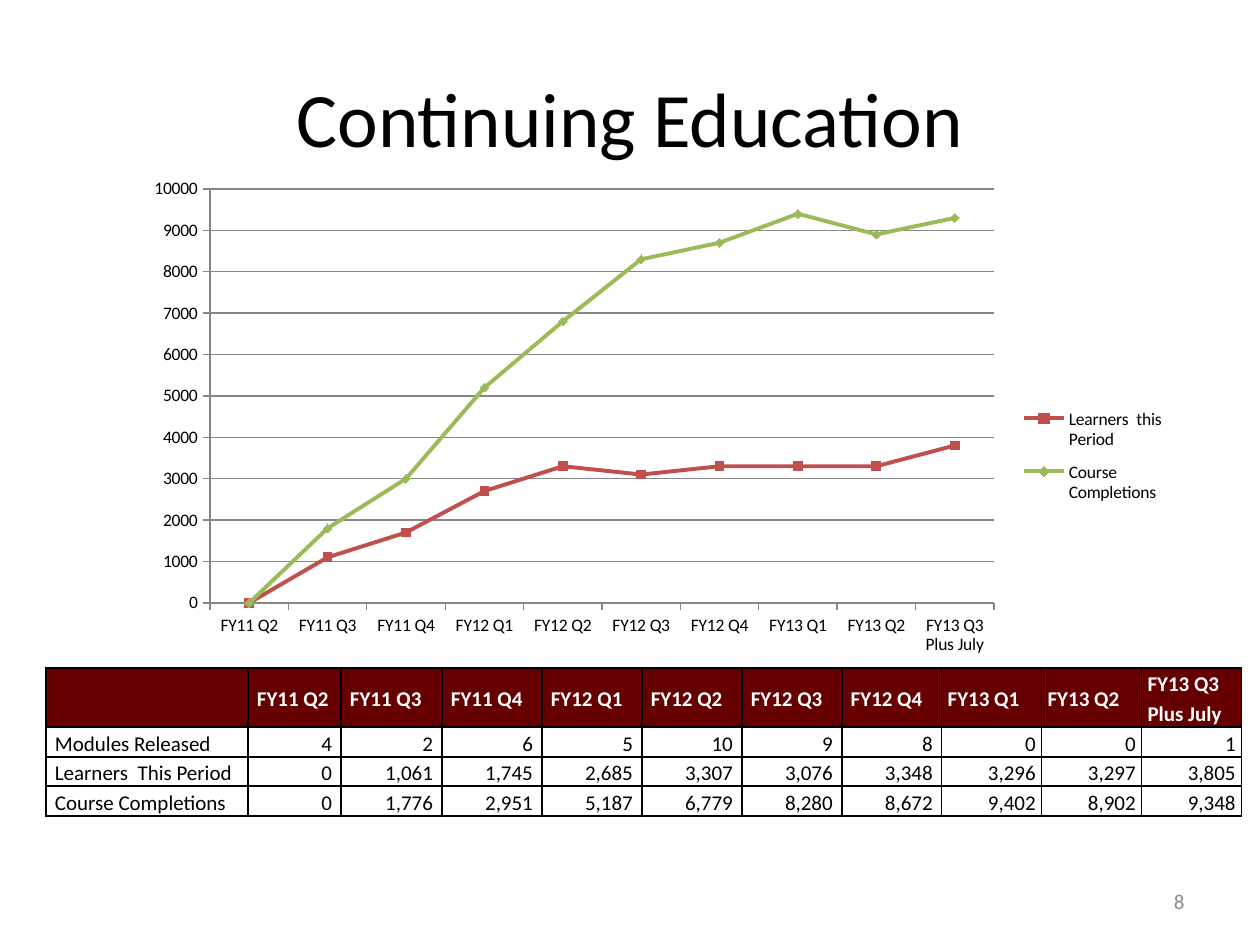
import pptx
import pptx.chart.data
import pptx.dml.color
import pptx.enum.chart
import pptx.enum.text
import pptx.oxml
import pptx.oxml.ns
import pptx.util

ALIGN = pptx.enum.text.PP_ALIGN
ANCHOR = pptx.enum.text.MSO_ANCHOR
MARKER = pptx.enum.chart.XL_MARKER_STYLE
NS = pptx.oxml.ns.nsdecls

FONT = "Calibri"
BLACK, WHITE, GREY = "000000", "FFFFFF", "8C8C8C"
MAROON, RED, GREEN, AXIS = "660000", "C0504D", "9BBB59", "868686"

QUARTERS = ["FY11 Q2", "FY11 Q3", "FY11 Q4", "FY12 Q1", "FY12 Q2", "FY12 Q3",
            "FY12 Q4", "FY13 Q1", "FY13 Q2", "FY13 Q3 Plus July"]
MODULES = [4, 2, 6, 5, 10, 9, 8, 0, 0, 1]
LEARNERS = [0, 1061, 1745, 2685, 3307, 3076, 3348, 3296, 3297, 3805]
COMPLETIONS = [0, 1776, 2951, 5187, 6779, 8280, 8672, 9402, 8902, 9348]


def px(n):
    return pptx.util.Emu(round(n * 914400 / 126))


def rgb(value):
    return pptx.dml.color.RGBColor.from_string(value)


class Deck:
    def __init__(self):
        self.prs = pptx.Presentation()
        self.prs.slide_width, self.prs.slide_height = px(1260), px(945)
        self.s = self.prs.slides.add_slide(self.prs.slide_layouts[5])

    def run(self, p, text, size, color, bold=False):
        r = p.add_run()
        r.text = text
        r.font.name, r.font.size, r.font.bold = FONT, pptx.util.Pt(size), bold
        r.font.color.rgb = rgb(color)

    def title(self, text, x, y, w, h):
        sp = self.s.shapes.title
        sp.left, sp.top, sp.width, sp.height = map(px, (x, y, w, h))
        tf = sp.text_frame
        tf.vertical_anchor = ANCHOR.MIDDLE
        tf.paragraphs[0].alignment = ALIGN.CENTER
        self.run(tf.paragraphs[0], text, 44, BLACK)

    def page_number(self, text, x, y, w, h):
        tf = self.s.shapes.add_textbox(*map(px, (x, y, w, h))).text_frame
        tf.word_wrap = True
        tf.vertical_anchor = ANCHOR.MIDDLE
        tf.paragraphs[0].alignment = ALIGN.RIGHT
        self.run(tf.paragraphs[0], text, 12, GREY)

    def chart_layout(self, box, frame, target=""):
        """Layout element for a box inside the chart frame, both in slide px."""
        x, y, w, h = frame
        parts = ((box[0] - x) / w, (box[1] - y) / h, box[2] / w, box[3] / h)
        places = "".join(f'<c:{tag} val="{v:.4f}"/>' for tag, v in zip("xywh", parts))
        return pptx.oxml.parse_xml(
            f'<c:layout {NS("c")}><c:manualLayout>{target}<c:xMode val="edge"/>'
            f'<c:yMode val="edge"/>{places}</c:manualLayout></c:layout>')

    def line_chart(self, cats, series, frame, plot, legend):
        data = pptx.chart.data.CategoryChartData(number_format="0")
        data.categories = cats
        for name, values, _, _ in series:
            data.add_series(name, values)
        kind = pptx.enum.chart.XL_CHART_TYPE.LINE_MARKERS
        chart = self.s.shapes.add_chart(kind, *map(px, frame), data).chart
        chart.font.name, chart.font.size = FONT, pptx.util.Pt(10)
        chart.font.color.rgb = rgb(BLACK)
        chart.has_title = False
        chart.has_legend = True
        chart.legend.position = pptx.enum.chart.XL_LEGEND_POSITION.RIGHT
        chart.legend.include_in_layout = False
        chart.plots[0].vary_by_categories = False

        # Axes and gridlines
        values = chart.value_axis
        values.minimum_scale, values.maximum_scale = 0, 10000
        values.major_unit = 1000
        values.has_major_gridlines = True
        values.tick_labels.number_format = "0"
        values.tick_labels.number_format_is_linked = False
        for axis in (chart.category_axis, values):
            axis.major_tick_mark = pptx.enum.chart.XL_TICK_MARK.OUTSIDE
        for part in (chart.category_axis, values, values.major_gridlines):
            part.format.line.color.rgb = rgb(AXIS)
            part.format.line.width = pptx.util.Pt(0.75)

        # Series lines and markers
        for line, (_, _, color, marker) in zip(chart.plots[0].series, series):
            line.smooth = False
            line.format.line.color.rgb = rgb(color)
            line.format.line.width = pptx.util.Pt(2.25)
            line.marker.style, line.marker.size = marker, 5
            line.marker.format.fill.solid()
            line.marker.format.fill.fore_color.rgb = rgb(color)
            line.marker.format.line.color.rgb = rgb(color)

        # Fixed places for the plot area and the legend
        area, key = chart.plots[0]._element.getparent(), chart.legend._element
        for parent in (area, key):
            for old in parent.findall(pptx.oxml.ns.qn("c:layout")):
                parent.remove(old)
        area.insert(0, self.chart_layout(plot, frame, '<c:layoutTarget val="inner"/>'))
        key.find(pptx.oxml.ns.qn("c:legendPos")).addnext(self.chart_layout(legend, frame))

    def borders(self, cell):
        tcPr = cell._tc.get_or_add_tcPr()
        for side in "LRTB":
            tcPr.append(pptx.oxml.parse_xml(
                f'<a:ln{side} {NS("a")} w="12700"><a:solidFill>'
                f'<a:srgbClr val="{BLACK}"/></a:solidFill></a:ln{side}>'))

    def cell(self, cell, text, header, label, margin):
        self.borders(cell)
        cell.margin_left = cell.margin_right = px(margin)
        cell.margin_top = cell.margin_bottom = 0
        if header:
            cell.fill.solid()
            cell.fill.fore_color.rgb = rgb(MAROON)
        else:
            cell.fill.background()
        cell.vertical_anchor = ANCHOR.MIDDLE if header or label else ANCHOR.BOTTOM
        p = cell.text_frame.paragraphs[0]
        if header or label:
            p.line_spacing = 1.15
        if not header:
            p.alignment = ALIGN.JUSTIFY if label else ALIGN.RIGHT
        if text:
            self.run(p, text, 12, WHITE if header else BLACK, header)

    def table(self, rows, x, y, widths, heights):
        table = self.s.shapes.add_table(
            len(rows), len(widths), px(x), px(y),
            px(sum(widths)), px(sum(heights))).table
        table.first_row = table.horz_banding = False
        for column, width in zip(table.columns, widths):
            column.width = px(width)
        for row, height in zip(table.rows, heights):
            row.height = px(height)
        for i, row in enumerate(rows):
            for j, text in enumerate(row):
                # The FY13 columns have narrower margins
                self.cell(table.cell(i, j), text, i == 0, j == 0, 9 if j < 8 else 6)


def main():
    deck = Deck()
    deck.title("Continuing Education", 63, 38, 1134, 158)
    deck.page_number("8", 903, 876, 294, 50)

    # Quarterly figures
    figures = [("Modules Released", MODULES),
               ("Learners  This Period", LEARNERS),
               ("Course Completions", COMPLETIONS)]
    rows = [["", *QUARTERS]]
    rows += [[name, *(f"{v:,}" for v in values)] for name, values in figures]
    deck.table(rows, 46, 668, [202, 93, 101] + [100] * 8, [59, 30, 29, 30])

    # Trend of learners and completions, to the nearest hundred
    trends = [("Learners  this Period", LEARNERS, RED, MARKER.SQUARE),
              ("Course Completions", COMPLETIONS, GREEN, MARKER.DIAMOND)]
    deck.line_chart(
        QUARTERS,
        [(name, [round(v, -2) for v in values], color, marker)
         for name, values, color, marker in trends],
        frame=(139, 169, 1040, 499), plot=(210, 189, 784, 414),
        legend=(1015, 396, 156, 120))
    deck.prs.save("out.pptx")


if __name__ == "__main__":
    main()
